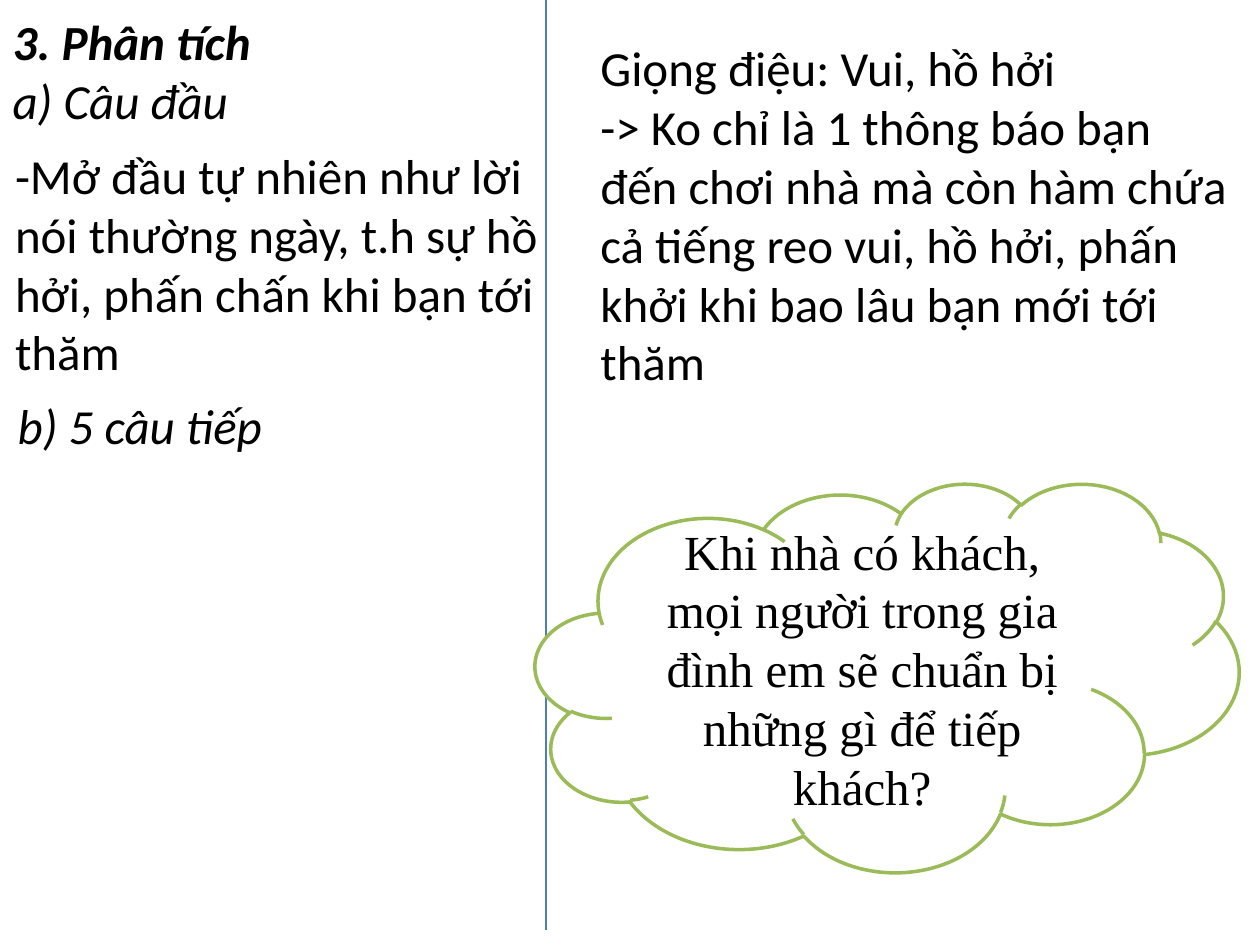
import pptx
import pptx.util
import pptx.dml.color
import pptx.enum.shapes
import pptx.enum.text
import pptx.oxml.ns
from lxml import etree

Pt = pptx.util.Pt
ALIGN = pptx.enum.text.PP_ALIGN
ANCHOR = pptx.enum.text.MSO_ANCHOR


def color(hex_string):
    return pptx.dml.color.RGBColor.from_string(hex_string)


def write(shape, lines, font_name="Calibri", align=ALIGN.LEFT, anchor=ANCHOR.TOP):
    """Fill a shape with paragraphs given as (text, bold, italic)."""
    frame = shape.text_frame
    frame.word_wrap = True
    frame.auto_size = pptx.enum.text.MSO_AUTO_SIZE.NONE
    frame.vertical_anchor = anchor
    frame.text = "\n".join(text for text, bold, italic in lines)
    for paragraph, (text, bold, italic) in zip(frame.paragraphs, lines):
        paragraph.alignment = align
        paragraph.font.name = font_name
        paragraph.font.size = Pt(28)
        paragraph.font.bold = bold
        paragraph.font.italic = italic
        paragraph.font.color.rgb = color("000000")


presentation = pptx.Presentation()
presentation.slide_width = Pt(720)
presentation.slide_height = Pt(540)
slide = presentation.slides.add_slide(presentation.slide_layouts[5])  # Title Only

# Heading
title = slide.shapes.title
title.left, title.top, title.width, title.height = Pt(0), Pt(3), Pt(360), Pt(143)
write(title, [("3. Phân tích", True, True), ("a) Câu đầu", False, True)])

# Column divider
divider = slide.shapes.add_connector(
    pptx.enum.shapes.MSO_CONNECTOR.STRAIGHT, Pt(312), Pt(0), Pt(312), Pt(531.5))
divider.line.color.rgb = color("4B7EBC")
divider.line.width = Pt(0.75)
etree.SubElement(divider._element.spPr, pptx.oxml.ns.qn("a:effectLst"))

# Notes on both sides of the divider: left, top, width, height, lines
notes = [
    (336, 18, 372, 245, [
        ("Giọng điệu: Vui, hồ hởi", False, False),
        ("-> Ko chỉ là 1 thông báo bạn đến chơi nhà mà còn hàm chứa cả tiếng reo vui, "
         "hồ hởi, phấn khởi khi bao lâu bạn mới tới thăm", False, False)]),
    (1.5, 79.5, 322.5, 143, [
        ("-Mở đầu tự nhiên như lời nói thường ngày, t.h sự hồ hởi, "
         "phấn chấn khi bạn tới thăm", False, False)]),
    (3, 222.5, 360, 75, [("b) 5 câu tiếp", False, True)]),
]
for left, top, width, height, lines in notes:
    note = slide.shapes.add_textbox(Pt(left), Pt(top), Pt(width), Pt(height))
    write(note, lines)

# Question for the class
cloud = slide.shapes.add_shape(
    pptx.enum.shapes.MSO_SHAPE.CLOUD, Pt(306), Pt(276), Pt(402), Pt(222))
cloud.shadow.inherit = False
cloud.fill.solid()
cloud.fill.fore_color.rgb = color("FFFFFF")
cloud.line.color.rgb = color("9BBB59")
cloud.line.width = Pt(2)
question = ("Khi nhà có khách, mọi người trong gia đình em sẽ chuẩn bị "
            "những gì để tiếp khách?")
write(cloud, [(question, False, False)], "Times New Roman", ALIGN.CENTER, ANCHOR.MIDDLE)

presentation.save("out.pptx")
